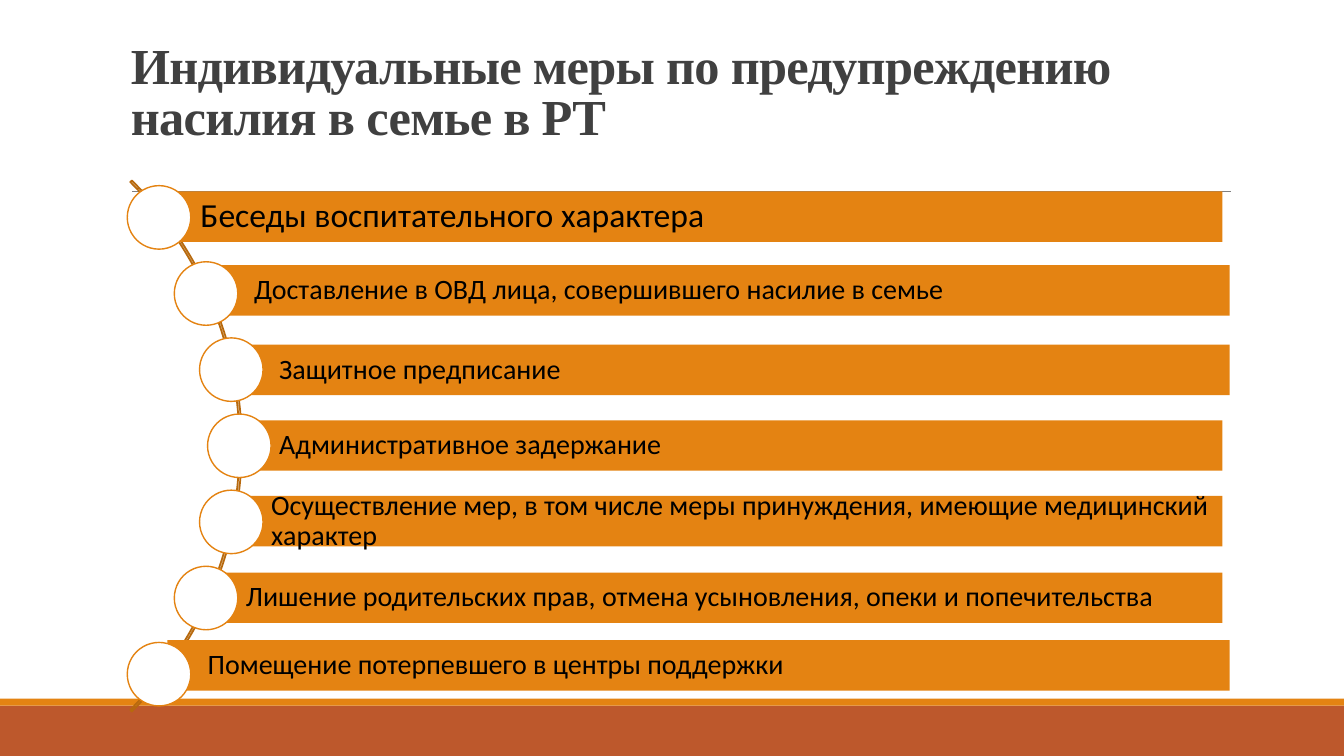
from dataclasses import dataclass
from math import sqrt

from lxml.etree import SubElement
from pptx import Presentation
from pptx.dml.color import RGBColor
from pptx.enum.shapes import MSO_CONNECTOR, MSO_SHAPE
from pptx.enum.text import MSO_ANCHOR, PP_ALIGN
from pptx.oxml.ns import qn
from pptx.util import Inches, Pt

ORANGE = "E48312"
RUST = "BD582C"
WHITE = "FFFFFF"
BLACK = "000000"

presentation = Presentation()
presentation.slide_width = Inches(13.333)
presentation.slide_height = Inches(7.5)
slide = presentation.slides.add_slide(presentation.slide_layouts[6])


@dataclass(frozen=True)
class Measure:
    text: str
    left: float
    top: float
    right: float
    size: int = 20
    inset: float = 0.06


SHORT_RIGHT = 90.95
LONG_RIGHT = 91.5
BAR_HEIGHT = 6.67
MEASURES = [
    Measure("Беседы воспитательного характера", 11.92, 25.33, SHORT_RIGHT, 24, 0.07),
    Measure("Доставление в ОВД лица, совершившего насилие в семье", 15.9, 35.07, LONG_RIGHT),
    Measure("Защитное предписание", 17.77, 45.6, LONG_RIGHT),
    Measure("Административное задержание", 17.77, 55.6, SHORT_RIGHT),
    Measure(
        "Осуществление мер, в том числе меры принуждения, имеющие медицинский характер",
        17.17, 65.6, SHORT_RIGHT,
    ),
    Measure(
        "Лишение родительских прав, отмена усыновления, опеки и попечительства",
        15.3, 75.73, SHORT_RIGHT,
    ),
    Measure("Помещение потерпевшего в центры поддержки", 12.45, 84.67, LONG_RIGHT),
]


def across(percent: float) -> int:
    return round(presentation.slide_width * percent / 100)


def down(percent: float) -> int:
    return round(presentation.slide_height * percent / 100)


def color(value: str) -> RGBColor:
    return RGBColor.from_string(value)


def add_figure(kind, left: int, top: int, width: int, height: int,
               fill: str = "", line: str = "", weight: float = 1):
    shape = slide.shapes.add_shape(kind, left, top, width, height)
    shape.shadow.inherit = False
    if fill:
        shape.fill.solid()
        shape.fill.fore_color.rgb = color(fill)
    else:
        shape.fill.background()
    if line:
        shape.line.color.rgb = color(line)
        shape.line.width = Pt(weight)
    else:
        shape.line.fill.background()
    return shape


def write(shape, text: str, font_name: str, size: int, text_color: str, spacing: float):
    shape.text_frame.word_wrap = True
    paragraph = shape.text_frame.paragraphs[0]
    paragraph.text = text
    paragraph.alignment = PP_ALIGN.LEFT
    paragraph.line_spacing = spacing
    paragraph.font.name = font_name
    paragraph.font.size = Pt(size)
    paragraph.font.color.rgb = color(text_color)
    return paragraph


def add_footer() -> None:
    for top, height, fill in [(93.33, 6.67, RUST), (92.4, 0.93, ORANGE)]:
        add_figure(MSO_SHAPE.RECTANGLE, 0, down(top), across(100), down(height), fill)


def add_title() -> None:
    rule = slide.shapes.add_connector(
        MSO_CONNECTOR.STRAIGHT, across(9.83), down(25.33), across(91.58), down(25.33))
    rule.line.color.rgb = color("808080")
    rule.line.width = Pt(0.5)
    SubElement(rule._element.spPr, qn("a:effectLst"))

    title = slide.shapes.add_textbox(across(9), down(4.13), across(82.5), down(15.87))
    title.text_frame.vertical_anchor = MSO_ANCHOR.BOTTOM
    paragraph = write(title, "Индивидуальные меры по предупреждению насилия в семье в РТ",
                      "Times New Roman", 36, "404040", 0.85)
    paragraph.font.bold = True
    paragraph.runs[0].font._element.set("spc", "-50")


def add_arc() -> None:
    diameter = down(99.33)
    arc = add_figure(MSO_SHAPE.BLOCK_ARC, across(-37.88), down(9.33),
                     diameter, diameter, line="B7690E", weight=1.25)
    for index, value in enumerate([189, 27, 0.003]):
        arc.adjustments[index] = value


def add_bar(measure: Measure) -> None:
    bar = add_figure(MSO_SHAPE.RECTANGLE, across(measure.left), down(measure.top),
                     across(measure.right - measure.left), down(BAR_HEIGHT), ORANGE)
    frame = bar.text_frame
    frame.vertical_anchor = MSO_ANCHOR.MIDDLE
    frame.margin_left = Inches(0.4)
    frame.margin_top = frame.margin_right = frame.margin_bottom = Inches(measure.inset)
    write(bar, measure.text, "Calibri", measure.size, BLACK, 0.9)


def add_marker(index: int) -> None:
    diameter = down(8.4)
    radius = down(48.27)
    offset = (index - (len(MEASURES) - 1) / 2) * down(10.07)
    center_x = across(17.81) - radius + sqrt(radius ** 2 - offset ** 2)
    center_y = down(58.97) + offset
    add_figure(MSO_SHAPE.OVAL, round(center_x - diameter / 2), round(center_y - diameter / 2),
               diameter, diameter, WHITE, ORANGE)


def main() -> None:
    add_footer()
    add_title()
    add_arc()
    for index, measure in enumerate(MEASURES):
        add_bar(measure)
        add_marker(index)
    presentation.save("out.pptx")


if __name__ == "__main__":
    main()
